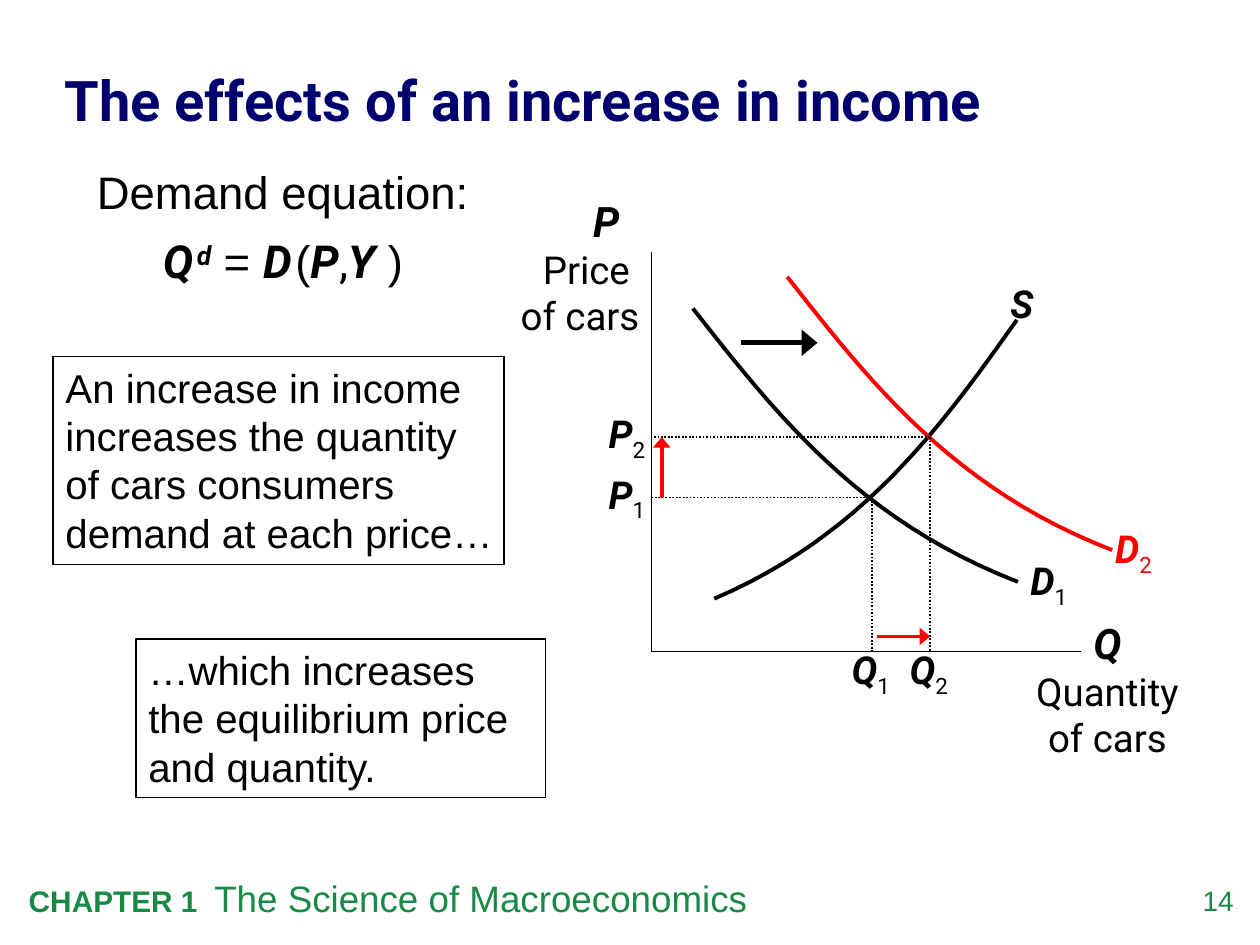
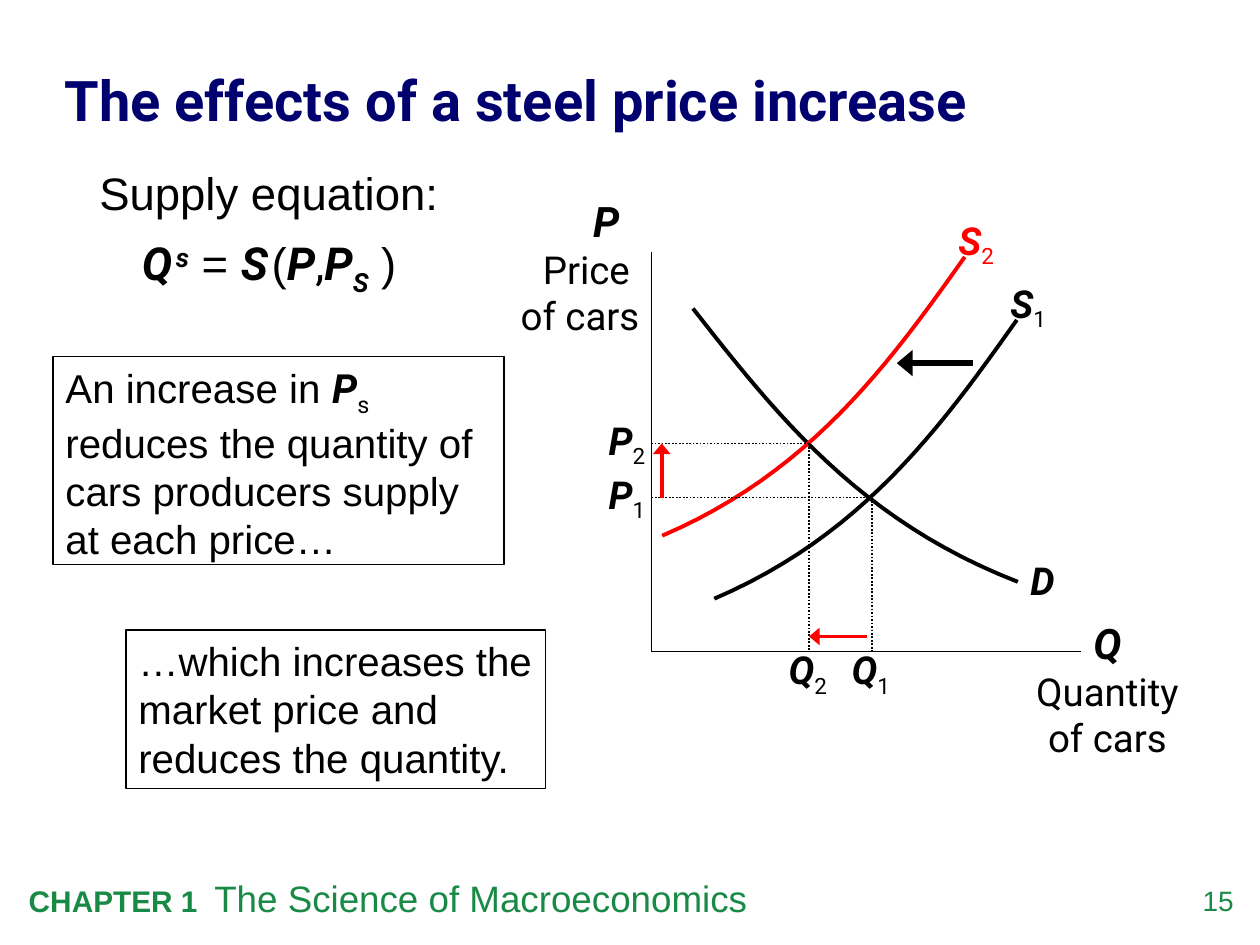
from lxml.etree import SubElement
from pptx import Presentation
from pptx.dml.color import RGBColor
from pptx.enum.dml import MSO_LINE_DASH_STYLE as Dash
from pptx.enum.shapes import MSO_CONNECTOR as Connector, MSO_SHAPE as Shape
from pptx.enum.text import MSO_ANCHOR as Anchor, PP_ALIGN as Align
from pptx.oxml.ns import qn
from pptx.util import Cm, Pt

BLACK = RGBColor(0x00, 0x00, 0x00)
WHITE = RGBColor(0xFF, 0xFF, 0xFF)
RED = RGBColor(0xFF, 0x00, 0x00)
NAVY = RGBColor(0x00, 0x00, 0x6E)
GREEN = RGBColor(0x19, 0x8A, 0x46)

# font, bold, italic, baseline in percent
STYLES = {
    "text": ("Arial", False, False, 0),
    "strong": ("Arial", True, False, 0),
    "label": ("Roboto", False, False, 0),
    "sub": ("Roboto", False, False, -25),
    "var": ("Roboto", True, True, 0),
    "var sub": ("Roboto", True, True, -25),
    "var sup": ("Roboto", True, True, 30),
}

# left, top, right and bottom margins in cm
NORMAL = (0.25, 0.13, 0.25, 0.13)
TIGHT_RIGHT = (0.25, 0.13, 0.13, 0.13)
OPEN_RIGHT = (0.25, 0.13, 0, 0.13)
NONE = (0, 0, 0, 0)

# Diagram geometry in cm
AXIS_X, AXIS_Y = 13.13, 13.13
AXIS_TOP, AXIS_RIGHT = 5.08, 21.79
SUPPLY = [(20.5, 6.45), (18.95, 8.64), (17.37, 10.8), (14.4, 12.07)]
DEMAND = [(13.97, 6.22), (15.65, 8.36), (17.32, 10.49), (20.52, 11.73)]
FIRST_EQUILIBRIUM = (17.58, 10.03)
STEPS = 24

SLIDES = [
    {
        "title": "The effects of an increase in income",
        "equation place": (1.45, 3.12, 8.51, 2.84),
        "equation": [
            [("Demand equation:", "text")],
            [("Q", "var"), (" ", "var", 8), ("d", "var sup"), (" = ", "text"),
             ("D", "var"), (" ", "var", 8), ("(", "text"), ("P", "var"),
             (",", "label"), ("Y", "var"), (" )", "text")],
        ],
        "cause": [("An increase in income increases the quantity \n"
                   "of cars consumers demand at each price…", "text")],
        "effect place": (2.74, 12.88, 8.26, 3.2),
        "effect": "…which increases the equilibrium price and quantity.",
        # points, shift, name, index, label place, colour
        "curves": [
            (SUPPLY, (0, 0), "S", "", (20.12, 5.51, 1.24, 1.32), BLACK),
            (DEMAND, (0, 0), "D", "1", (20.52, 11.1, 1.47, 1.19), BLACK),
            (DEMAND, (1.9, -0.64), "D", "2", (22.23, 10.46, 1.7, 1.19), RED),
        ],
        "new equilibrium": (18.75, 8.81),
        "shift arrow": (14.94, 6.91, 16.48, 6.91),
    },
    {
        "title": "The effects of a steel price increase",
        "equation place": (1.17, 3.15, 8.51, 2.84),
        "equation": [
            [("Supply equation:", "text")],
            [("Q", "var"), (" ", "var", 8), ("s", "var sup"), (" = ", "text"),
             ("S", "var"), (" ", "var", 8), ("(", "text"), ("P", "var"),
             (",", "label"), ("P", "var"), ("S", "var sub"), (" )", "text")],
        ],
        "cause": [("An increase in ", "text"), ("P", "var"), ("s", "sub"),
                  (" reduces the quantity of cars producers supply "
                   "at each price…", "text")],
        "effect place": (2.54, 12.7, 8.46, 3.2),
        "effect": "…which increases the market price and "
                  "reduces the quantity.",
        "curves": [
            (SUPPLY, (0, 0), "S", "1", (20.12, 5.51, 1.24, 1.32), BLACK),
            (DEMAND, (0, 0), "D", "", (20.52, 11.1, 1.47, 1.19), BLACK),
            (SUPPLY, (-1.05, -1.27), "S", "2", (19.07, 4.24, 1.24, 1.32), RED),
        ],
        "new equilibrium": (16.31, 8.94),
        "shift arrow": (19.61, 7.32, 18.08, 7.32),
    },
]


def add_text(slide, place, paragraphs, size, color=BLACK, margins=NORMAL,
             align=Align.LEFT, spacing=1.0, framed=False):
    """Add text made of (text, style[, size]) spans, framed or not."""
    place = [Cm(value) for value in place]
    if framed:
        box = slide.shapes.add_shape(Shape.RECTANGLE, *place)
        box.shadow.inherit = False
        box.fill.solid()
        box.fill.fore_color.rgb = WHITE
        box.line.color.rgb = BLACK
        box.line.width = Pt(0.75)
    else:
        box = slide.shapes.add_textbox(*place)
    frame = box.text_frame
    frame.word_wrap = True
    frame.vertical_anchor = Anchor.TOP
    (frame.margin_left, frame.margin_top,
     frame.margin_right, frame.margin_bottom) = [Cm(m) for m in margins]
    for number, spans in enumerate(paragraphs):
        para = frame.add_paragraph() if number else frame.paragraphs[0]
        para.alignment = align
        para.line_spacing = spacing
        if number:
            para.space_before = Pt(7)
        for text, style, *own_size in spans:
            name, bold, italic, baseline = STYLES[style]
            for index, part in enumerate(text.split("\n")):
                if index:
                    para.add_line_break()
                span = para.add_run()
                span.text = part
                font = span.font
                font.name, font.bold, font.italic = name, bold, italic
                font.size = Pt(own_size[0] if own_size else size)
                font.color.rgb = color
                if baseline:
                    font._element.set("baseline", str(baseline * 1000))


def add_line(slide, ends, width, color=BLACK, dotted=False, arrow=False):
    line = slide.shapes.add_connector(
        Connector.STRAIGHT, *[Cm(value) for value in ends])
    line.line.color.rgb = color
    line.line.width = Pt(width)
    if dotted:
        line.line.dash_style = Dash.ROUND_DOT
    if arrow:
        SubElement(line.line._get_or_add_ln(), qn("a:tailEnd"),
                   type="triangle", w="lg", len="med")
    SubElement(line._element.spPr, qn("a:effectLst"))


deck = Presentation()
deck.slide_width, deck.slide_height = Cm(25.4), Cm(19.05)
title_only = deck.slide_layouts[5]

for page_number, content in enumerate(SLIDES, start=14):
    page = deck.slides.add_slide(title_only)

    # Title and footer
    title = page.shapes.title
    title.left, title.top = Cm(1.3), Cm(0.66)
    title.width, title.height = Cm(22.91), Cm(2.62)
    frame = title.text_frame
    frame.text = content["title"]
    frame.vertical_anchor = Anchor.MIDDLE
    frame.margin_left = frame.margin_right = 0
    frame.margin_top = frame.margin_bottom = 0
    para = frame.paragraphs[0]
    para.alignment = Align.LEFT
    para.line_spacing = 1.05
    font = para.runs[0].font
    font.name, font.size, font.bold = "Roboto", Pt(32), True
    font.color.rgb = NAVY
    add_text(page, (23.47, 17.81, 1.4, 0.81), [[(str(page_number), "text")]],
             16, GREEN, NONE, Align.RIGHT)
    add_text(page, (0.33, 17.53, 20.78, 1.14),
             [[("CHAPTER 1  ", "strong", 17),
               ("The Science of Macroeconomics", "text")]], 21, GREEN)

    # Axes
    add_line(page, (AXIS_X, AXIS_TOP, AXIS_X, AXIS_Y), 0.75)
    add_line(page, (AXIS_X, AXIS_Y, AXIS_RIGHT, AXIS_Y), 0.75)
    add_text(page, (20.52, 12.32, 3.61, 3.12),
             [[("Q", "var", 24), (" Quantity of cars", "label")]],
             22, align=Align.CENTER)
    add_text(page, (9.96, 3.81, 3.18, 3.15),
             [[("P ", "var", 24), (" \nPrice \nof cars", "label")]],
             22, align=Align.RIGHT)

    # Supply and demand curves, traced as cubic Béziers
    for points, (dx, dy), name, index, label_place, color in content["curves"]:
        trace = []
        for step in range(STEPS + 1):
            t = step / STEPS
            weights = ((1 - t) ** 3, 3 * t * (1 - t) ** 2,
                       3 * t ** 2 * (1 - t), t ** 3)
            x = dx + sum(w * point[0] for w, point in zip(weights, points))
            y = dy + sum(w * point[1] for w, point in zip(weights, points))
            trace.append((Cm(x), Cm(y)))
        builder = page.shapes.build_freeform(*trace[0])
        builder.add_line_segments(trace[1:], close=False)
        curve = builder.convert_to_shape()
        curve.shadow.inherit = False
        curve.fill.background()
        curve.line.color.rgb = color
        curve.line.width = Pt(2.25)
        spans = [(name, "var")] + ([(index, "sub")] if index else [])
        add_text(page, label_place, [spans], 22, color, OPEN_RIGHT)

    # Equilibria with their guide lines and tick labels
    equilibria = [FIRST_EQUILIBRIUM, content["new equilibrium"]]
    for index, (x, y) in enumerate(equilibria, start=1):
        add_line(page, (x, y, AXIS_X, y), 1, dotted=True)
        add_line(page, (x, y, x, AXIS_Y), 1, dotted=True)
        ticks = [("P", 12.27, y - 0.54), ("Q", x - 0.41, 13.03)]
        for name, left, top in ticks:
            add_text(page, (left, top, 1.07, 0.94),
                     [[(name, "var"), (str(index), "sub")]], 22, margins=NONE)

    # Arrows for the changes
    (old_x, old_y), (new_x, new_y) = equilibria
    gap = 0.1 if new_x > old_x else -0.1
    add_line(page, (13.34, old_y, 13.34, new_y), 2, RED, arrow=True)
    add_line(page, (old_x + gap, 12.83, new_x, 12.83), 2, RED, arrow=True)
    add_line(page, content["shift arrow"], 3, arrow=True)

    # Explanation
    add_text(page, content["equation place"], content["equation"], 26,
             align=Align.CENTER, spacing=1.05)
    add_text(page, (1.07, 7.19, 9.09, 4.19), [content["cause"]], 23,
             margins=TIGHT_RIGHT, framed=True)
    add_text(page, content["effect place"], [[(content["effect"], "text")]],
             23, framed=True)

deck.save("out.pptx")
